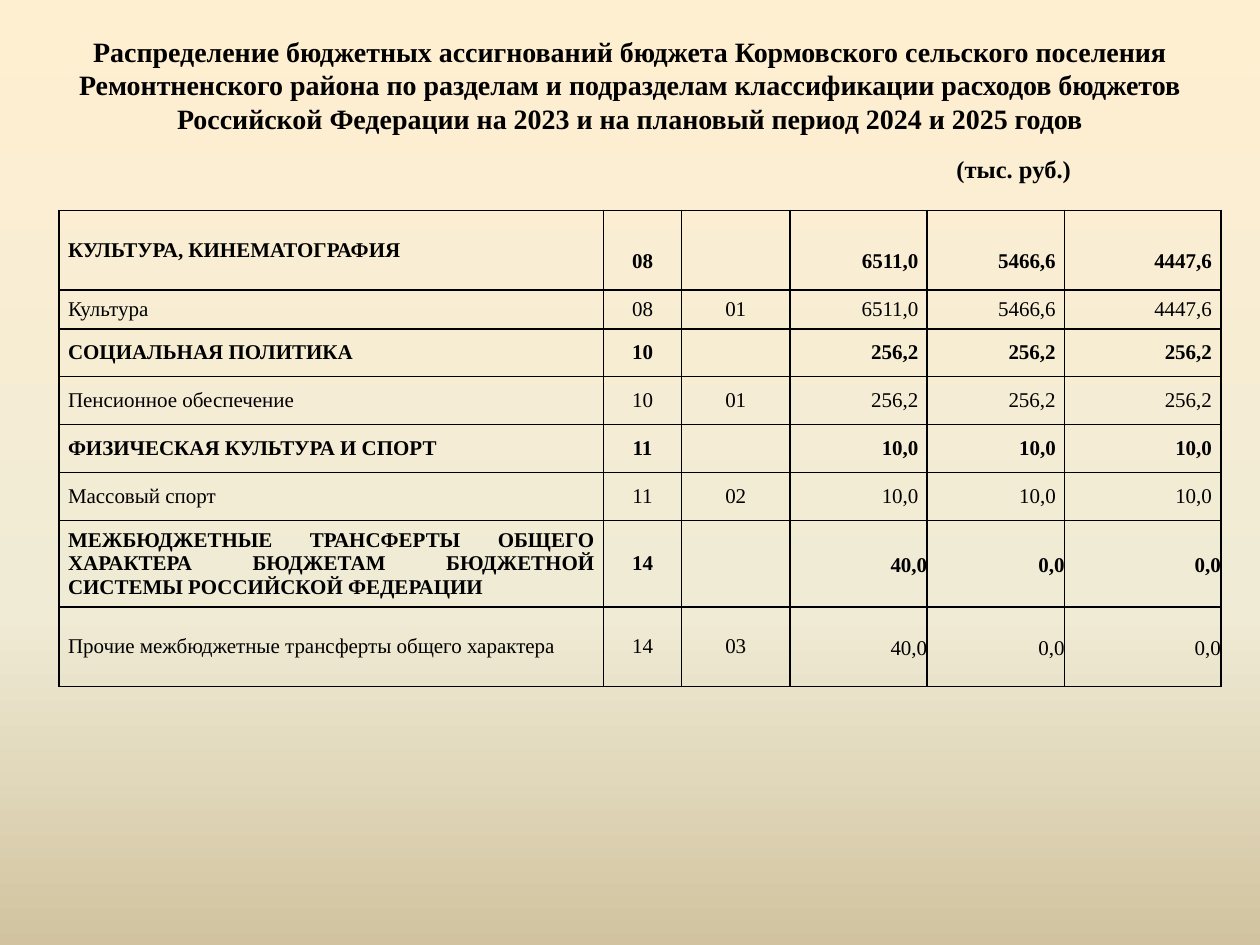
from copy import deepcopy

from lxml import etree
from pptx import Presentation
from pptx import util as u
from pptx.dml.color import RGBColor
from pptx.enum import text
from pptx.oxml.ns import qn

WIDTH, HEIGHT = 10, 7.5
FONT, INK = "Times New Roman", "000000"
LEFT, CENTER, RIGHT, JUSTIFY = (text.PP_ALIGN.LEFT, text.PP_ALIGN.CENTER,
                                text.PP_ALIGN.RIGHT, text.PP_ALIGN.JUSTIFY)

TITLE = ("Распределение бюджетных ассигнований бюджета Кормовского сельского поселения "
         "Ремонтненского района по разделам и подразделам классификации расходов бюджетов "
         "Российской Федерации на 2023 и на плановый период 2024 и 2025 годов")
UNITS = "(тыс. руб.)"

COLUMNS = [4.32, 0.62, 0.86, 1.09, 1.09, 1.24]
ALIGNS = [JUSTIFY, CENTER, CENTER, RIGHT, RIGHT, RIGHT]

# Row height, then name, section, subsection and the sums for three years
BUDGET = [
    (0.63, "КУЛЬТУРА, КИНЕМАТОГРАФИЯ", "08", "", "6511,0", "5466,6", "4447,6"),
    (0.31, "Культура", "08", "01", "6511,0", "5466,6", "4447,6"),
    (0.38, "СОЦИАЛЬНАЯ ПОЛИТИКА", "10", "", "256,2", "256,2", "256,2"),
    (0.38, "Пенсионное обеспечение", "10", "01", "256,2", "256,2", "256,2"),
    (0.38, "ФИЗИЧЕСКАЯ КУЛЬТУРА И СПОРТ", "11", "", "10,0", "10,0", "10,0"),
    (0.38, "Массовый спорт", "11", "02", "10,0", "10,0", "10,0"),
    (0.69, "МЕЖБЮДЖЕТНЫЕ ТРАНСФЕРТЫ ОБЩЕГО ХАРАКТЕРА БЮДЖЕТАМ БЮДЖЕТНОЙ "
           "СИСТЕМЫ РОССИЙСКОЙ ФЕДЕРАЦИИ", "14", "", "40,0", "0,0", "0,0"),
    (0.63, "Прочие межбюджетные трансферты общего характера",
     "14", "03", "40,0", "0,0", "0,0"),
]


def color(hex_code):
    return RGBColor.from_string(hex_code)


def write(frame, words, size=12, bold=False, align=LEFT, spacing=None):
    frame.word_wrap = True
    paragraph = frame.paragraphs[0]
    paragraph.alignment = align
    if spacing:
        paragraph.line_spacing = spacing
    if words:
        run = paragraph.add_run()
        run.text = words
        run.font.name, run.font.size, run.font.bold = FONT, u.Pt(size), bold
        run.font.color.rgb = color(INK)


def paint_background(slide, stops):
    fill = slide.background.fill
    fill.gradient()
    fill.gradient_angle = 270
    stop_list = slide.element.find(".//" + qn("a:gsLst"))
    stop_list.append(deepcopy(stop_list[-1]))
    for stop, (position, hex_code) in zip(fill.gradient_stops, stops):
        stop.position = position
        stop.color.rgb = color(hex_code)


def add_caption(slide, box, words, indent=0, **style):
    frame = slide.shapes.add_textbox(*map(u.Inches, box)).text_frame
    frame.vertical_anchor = text.MSO_ANCHOR.MIDDLE
    frame.margin_left = u.Inches(0.1 + indent)
    write(frame, words, bold=True, align=CENTER, **style)


def add_borders(cell, width=1):
    properties = cell._tc.get_or_add_tcPr()
    for position, side in enumerate(("lnL", "lnR", "lnT", "lnB")):
        line = etree.Element(qn("a:" + side), w=str(u.Pt(width)))
        ink = etree.SubElement(line, qn("a:solidFill"))
        etree.SubElement(ink, qn("a:srgbClr"), val=INK)
        properties.insert(position, line)


def add_budget_table(slide, box):
    table = slide.shapes.add_table(len(BUDGET), len(COLUMNS), *map(u.Inches, box)).table
    table.first_row = table.horz_banding = False
    for column, share in zip(table.columns, COLUMNS):
        column.width = u.Inches(box[2] * share / sum(COLUMNS))
    heights = [entry[0] for entry in BUDGET]
    for r, (height, *values) in enumerate(BUDGET):
        table.rows[r].height = u.Inches(box[3] * height / sum(heights))
        is_section = not values[2]
        for c, value in enumerate(values):
            cell = table.cell(r, c)
            # Sums of the last section run flush to the cell edge
            flush = values[1] == "14" and c > 2
            cell.margin_left = cell.margin_right = u.Inches(0 if flush else 0.07)
            # Codes and sums of the first row sit one line lower
            cell.margin_top = u.Inches(0.18 if r == 0 and c else 0)
            cell.margin_bottom = 0
            cell.vertical_anchor = text.MSO_ANCHOR.MIDDLE
            cell.fill.background()
            add_borders(cell)
            write(cell.text_frame, value, bold=is_section, align=ALIGNS[c],
                  spacing=1.15 if flush else None)


def main():
    deck = Presentation()
    deck.slide_width, deck.slide_height = u.Inches(WIDTH), u.Inches(HEIGHT)
    slide = deck.slides.add_slide(deck.slide_layouts[6])
    paint_background(slide, [(0, "FFEFD1"), (0.65, "F0EBD5"), (1, "D1C39F")])

    # Title, table, unit of measure
    margin = 0.05 * WIDTH
    add_caption(slide, (margin, 0.16, WIDTH - 2 * margin, 1.02), TITLE, size=16)
    add_budget_table(slide, (0.47, 1.67, sum(COLUMNS), sum(row[0] for row in BUDGET)))
    add_caption(slide, (6.25, 1.17, 3.44, 0.34), UNITS, indent=0.15, size=14)
    deck.save("out.pptx")


if __name__ == "__main__":
    main()
